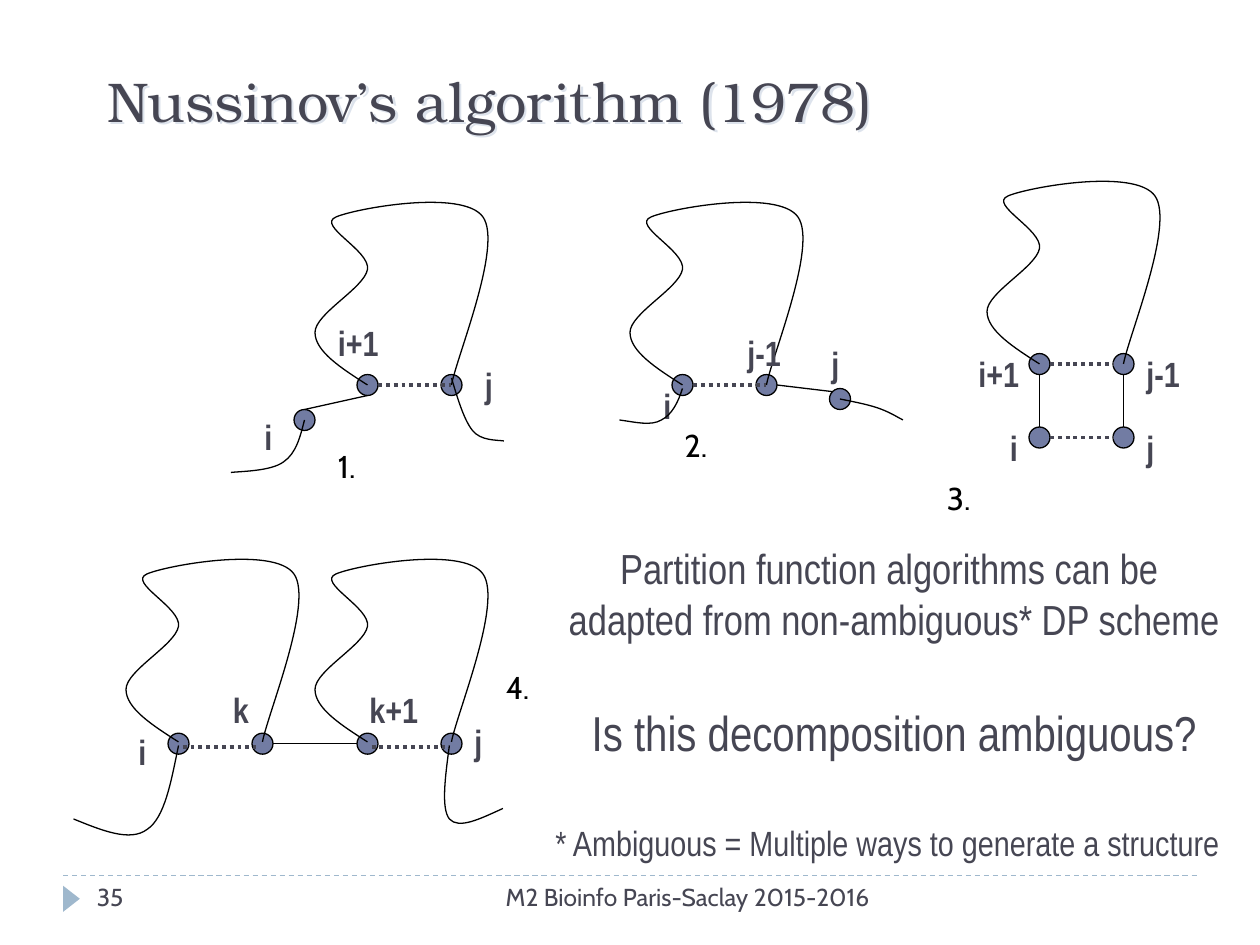
from lxml import etree
from pptx import Presentation
from pptx.dml.color import RGBColor
from pptx.enum.dml import MSO_LINE
from pptx.enum.shapes import MSO_CONNECTOR, MSO_SHAPE
from pptx.enum.text import MSO_ANCHOR, MSO_AUTO_SIZE, PP_ALIGN
from pptx.oxml.ns import qn
from pptx.util import Inches, Pt

OVAL, WEDGE = MSO_SHAPE.OVAL, MSO_SHAPE.ISOSCELES_TRIANGLE
STRAIGHT = MSO_CONNECTOR.STRAIGHT
DASH, DOTS = MSO_LINE.DASH, MSO_LINE.ROUND_DOT
TOP, FIXED = MSO_ANCHOR.TOP, MSO_AUTO_SIZE.NONE
LEFT, MID, RIGHT = PP_ALIGN.LEFT, PP_ALIGN.CENTER, PP_ALIGN.RIGHT
COLORS = {"ink": "464653", "black": "000000", "node": "727CA3", "rule": "9FB8CD", "glow": "DDE3EC"}
SERIF, NARROW, SANS = "TeX Gyre Bonum", "Arial Narrow", "Cabin"
WIDTHS = {"i": 0.75, "j": 0.75, "k": 1.55, "+": 1.6, "-": 0.95, "1": 1.55}
LOOP = [(0, 0), (-2.5, -1.6), (-5, -3.2), (-5, -5),
        (-5, -6.8), (-0.33, -9.2), (0, -11),
        (0.3, -12.8), (-4.9, -15.2), (-3, -16),
        (-1.2, -16.8), (9.1, -18.7), (11, -16),
        (12.9, -13.3), (8.5, -2.7), (8, 0)]


def unit(n):
    return Inches(n / 12)


def tint(name):
    return RGBColor.from_string(COLORS[name])


def write(para, text, size=20, font=NARROW, color="ink", bold=False, align=LEFT, before=0):
    para.alignment = align
    para.space_before = Pt(before)
    run = para.add_run()
    run.text = text
    run.font.size, run.font.name, run.font.bold = Pt(size), font, bold
    run.font.color.rgb = tint(color)


class Board:
    def __init__(self, deck):
        self.slide = deck.slides.add_slide(deck.slide_layouts[5])
        self.shapes = self.slide.shapes

    def group(self):
        self.shapes = self.slide.shapes.add_group_shape().shapes

    def ungroup(self):
        self.shapes = self.slide.shapes

    def title(self, text, x, y, w, h):
        box = self.slide.shapes.title
        box.left, box.top, box.width, box.height = map(unit, (x, y, w, h))
        frame = box.text_frame
        frame.vertical_anchor, frame.auto_size, frame.margin_top = TOP, FIXED, 0
        write(frame.paragraphs[0], text, size=32, font=SERIF)
        box.fill.background()
        glow = etree.SubElement(box._element.spPr, qn("a:effectLst"))
        cast = etree.SubElement(glow, qn("a:outerShdw"), dist="25400", dir="2700000")
        etree.SubElement(cast, qn("a:srgbClr"), val=COLORS["glow"])

    def text(self, lines, x, y, w, h, wrap=True, **style):
        frame = self.shapes.add_textbox(*map(unit, (x, y, w, h))).text_frame
        frame.word_wrap = wrap
        for n, (line, extra) in enumerate(lines):
            para = frame.add_paragraph() if n else frame.paragraphs[0]
            write(para, line, **{**style, **extra})

    def label(self, text, x, y):
        width = 2.4 + sum(WIDTHS[c] for c in text)
        self.text([(text, {})], x, y, width, 5.2, wrap=False, bold=True)

    def shape(self, kind, x, y, w, h, fill, edge=None, turn=0):
        item = self.shapes.add_shape(kind, *map(unit, (x - w / 2, y - h / 2, w, h)))
        item.shadow.inherit = False
        item.rotation = turn
        item.fill.solid()
        item.fill.fore_color.rgb = tint(fill)
        if edge:
            item.line.color.rgb, item.line.width = tint(edge), Pt(0.75)
        else:
            item.line.fill.background()

    def node(self, x, y):
        self.shape(OVAL, x, y, 2, 2, "node", "black")

    def line(self, x1, y1, x2, y2, color="black", width=0.75, dash=None):
        item = self.shapes.add_connector(STRAIGHT, *map(unit, (x1, y1, x2, y2)))
        item.line.color.rgb, item.line.width = tint(color), Pt(width)
        if dash:
            item.line.dash_style = dash
        etree.SubElement(item._element.spPr, qn("a:effectLst"))

    def pair(self, x1, x2, y):
        self.line(x1, y, x2, y, "ink", 2.25, DOTS)

    def curve(self, points):
        start, *rest = [tuple(map(unit, point)) for point in points]
        pen = self.shapes.build_freeform(*start)
        pen.add_line_segments(rest, close=False)
        item = pen.convert_to_shape()
        legs = list(item._element.iter(qn("a:lnTo")))
        for n in range(0, len(legs), 3):
            arc = etree.Element(qn("a:cubicBezTo"))
            legs[n].addprevious(arc)
            for leg in legs[n:n + 3]:
                arc.append(leg[0])
                leg.getparent().remove(leg)
        item.shadow.inherit = False
        item.fill.background()
        item.line.color.rgb, item.line.width = tint("black"), Pt(0.75)

    def loop(self, x, y):
        self.curve([(x + dx, y + dy) for dx, dy in LOOP])

    def case(self, nodes, lines, loops, tails, pairs, labels):
        self.group()
        for draw, items in ((self.node, nodes), (self.line, lines), (self.loop, loops),
                            (self.pair, pairs), (self.label, labels)):
            for item in items:
                draw(*item)
        for tail in tails:
            self.curve(tail)
        self.ungroup()


def main():
    deck = Presentation()
    deck.slide_width, deck.slide_height = unit(120), unit(90)
    board = Board(deck)
    board.line(6, 83.4, 114, 83.4, "rule", 0.75, DASH)
    board.shape(WEDGE, 6.8, 85.6, 2.5, 1.6, "rule", turn=90)

    high, low, base, row = 34.67, 41.67, 36.67, 70.83
    board.case(
        nodes=[(x, y) for y in (low, high) for x in (99, 107)],
        lines=[(x, low - 1, x, high + 1) for x in (99, 107)],
        loops=[(99, high)], tails=[],
        pairs=[(100, 106, high), (100, 106, low)],
        labels=[("i", 95, 40), ("j", 108, 40), ("i+1", 92, 33), ("j-1", 108, 33)])
    board.case(
        nodes=[(29, 40), (35, base), (43, base)],
        lines=[(29, 39, 35, base + 1)],
        loops=[(35, base)],
        tails=[[(29, 40), (28.6, 41.6), (28.2, 43.2), (27, 44), (25.8, 44.9), (22.8, 44.9), (22, 45)],
               [(43, 36), (43.6, 38), (44.2, 40), (45, 41), (45.8, 42), (47.3, 41.9), (48, 42)]],
        pairs=[(36, 43, base)],
        labels=[("i", 24, 39), ("i+1", 31, 30), ("j", 45, 34)])
    board.case(
        nodes=[(80, 38), (65, base), (73, base)],
        lines=[(74, base, 79.3, 37.3)],
        loops=[(65, base)],
        tails=[[(65, 37), (64.6, 38.3), (64, 39.5), (63, 40), (62, 40.6), (60.5, 40.2), (59, 40)],
               [(80, 38), (81.5, 38.3), (83, 38.6), (84, 39), (85, 39.4), (85.4, 39.7), (86, 40)]],
        pairs=[(66, 73, base)],
        labels=[("j", 78, 32), ("i", 62, 36), ("j-1", 70, 31)])
    board.case(
        nodes=[(x, row) for x in (17, 25, 35, 43)],
        lines=[(34, row, 26, row)],
        loops=[(17, 70.67), (35, 70.67)],
        tails=[[(17, 71), (16.3, 74.4), (15.7, 77.9), (14, 79), (12.4, 80.2), (9.7, 79.1), (7, 78)],
               [(42.8, 71), (42.4, 74), (42, 77), (42.8, 78), (43.7, 79), (45.7, 78), (47.9, 77)]],
        pairs=[],
        labels=[("i", 12, 69), ("k", 21, 65), ("k+1", 34, 65), ("j", 44, 68)])
    for x in (35.4, 17.4):
        board.pair(x, x + 7, 71.16)

    board.title("Nussinov’s algorithm (1978)", 9, 6.3, 108, 15)
    for n, (x, y) in enumerate([(31, 42), (64, 40), (89, 45), (47, 63)], 1):
        board.text([(f"{n}.", {})], x, y, 5.4, 6, wrap=False, size=18, font=SANS, color="black")
    board.text([
        ("Partition function algorithms can be ", {}),
        ("adapted from non-ambiguous* DP scheme", {}),
        ("Is this decomposition ambiguous?", {"size": 28, "before": 33.5}),
        ("* Ambiguous = Multiple ways to generate a structure",
         {"size": 20, "before": 34.5, "align": LEFT}),
    ], 51.72, 51.12, 66.84, 31.92, size=24, align=MID)
    board.text([("35", {})], 8.04, 83.4, 26, 4.8, size=14, font=SANS)
    board.text([("M2 Bioinfo Paris-Saclay 2015-2016", {})], 38, 83.4, 46, 4.8,
               size=14, font=SANS, align=RIGHT)
    deck.save("out.pptx")


if __name__ == "__main__":
    main()
